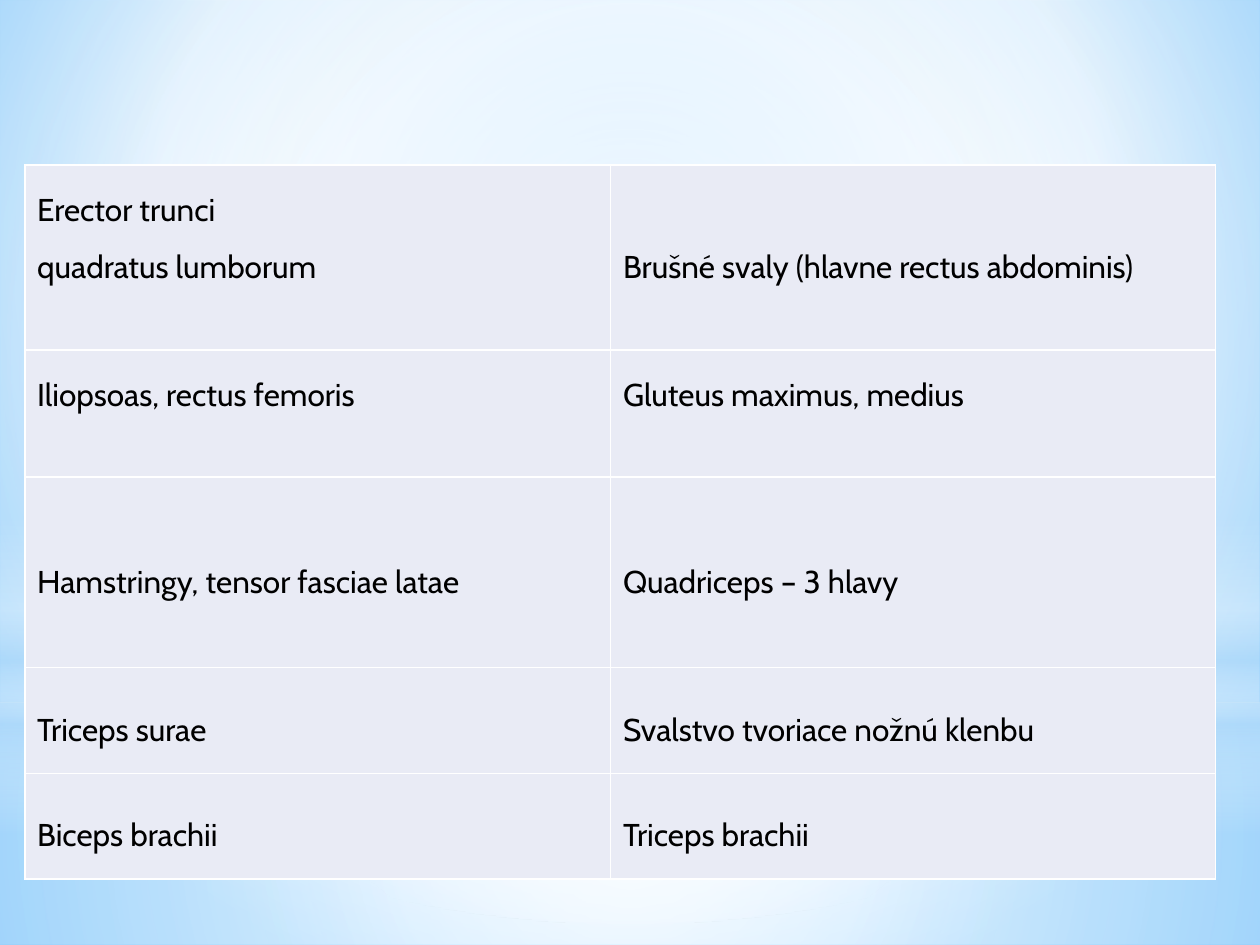
"""Build a slide with a two-column table of opposing muscle groups."""
from dataclasses import dataclass

from lxml.etree import SubElement
from pptx import Presentation
from pptx.dml.color import RGBColor
from pptx.enum.shapes import MSO_SHAPE
from pptx.enum.text import MSO_ANCHOR, PP_ALIGN
from pptx.oxml import parse_xml
from pptx.oxml.ns import nsdecls, qn
from pptx.slide import Slide
from pptx.util import Cm, Pt

MUSCLES = [
    (["Erector trunci", "quadratus lumborum"], ["Brušné svaly (hlavne rectus abdominis)"]),
    (["Iliopsoas, rectus femoris"], ["Gluteus maximus, medius"]),
    (["Hamstringy, tensor fasciae latae"], ["Quadriceps – 3 hlavy"]),
    (["Triceps surae"], ["Svalstvo tvoriace nožnú klenbu"]),
    (["Biceps brachii"], ["Triceps brachii"]),
]
RAISED_CELLS = {(0, 0), (1, 0), (1, 1)}
COLUMN_WIDTHS = [11.81, 12.19]
ROW_HEIGHTS = [3.68, 2.54, 3.84, 2.13, 2.13]
CENTRE = (50, 50, 50, 50)


def colour(value):
    """Turn a hex string into a colour."""
    return RGBColor.from_string(value)


@dataclass
class Painter:
    """Hold the style and the current slide."""

    slide: Slide
    font: str = "Cabin"
    size: int = 18
    ink: str = "000000"
    cell_fill: str = "E9EBF5"
    border: str = "FFFFFF"

    def gradient(self, fill, owner, stops, focus=None):
        """Give a fill a circular gradient, or a vertical one without a focus."""
        fill.gradient()
        gradient = owner.find(".//" + qn("a:gradFill"))
        for child in list(gradient):
            gradient.remove(child)
        stop_list = SubElement(gradient, qn("a:gsLst"))
        for position, value, opacity in stops:
            stop = SubElement(stop_list, qn("a:gs"), pos=str(position * 1000))
            tone = SubElement(stop, qn("a:srgbClr"), val=value)
            if opacity < 100:
                SubElement(tone, qn("a:alpha"), val=str(opacity * 1000))
        if focus is None:
            SubElement(gradient, qn("a:lin"), ang="5400000", scaled="0")
        else:
            route = SubElement(gradient, qn("a:path"), attrib={"path": "circle"})
            edges = {side: str(part * 1000) for side, part in zip("ltrb", focus)}
            SubElement(route, qn("a:fillToRect"), attrib=edges)

    def background(self, stops, focus):
        """Fill the slide background."""
        self.gradient(self.slide.background.fill, self.slide.element, stops, focus)

    def glow(self, kind, top, height, stops, focus=None):
        """Add a full-width gradient shape."""
        shape = self.slide.shapes.add_shape(kind, 0, Cm(top), Cm(25.4), Cm(height))
        shape.shadow.inherit = False
        shape.line.fill.background()
        self.gradient(shape.fill, shape.element, stops, focus)

    def table(self, left, top, widths, heights, rows):
        """Add a table with one list of lines for each cell."""
        frame = self.slide.shapes.add_table(
            len(heights), len(widths), Cm(left), Cm(top), Cm(sum(widths)), Cm(sum(heights)))
        table = frame.table
        table.first_row = table.horz_banding = False
        for column, width in zip(table.columns, widths):
            column.width = Cm(width)
        for row, height in zip(table.rows, heights):
            row.height = Cm(height)
        for row_index, row in enumerate(rows):
            for column_index, lines in enumerate(row):
                raised = (row_index, column_index) in RAISED_CELLS
                self.cell(table.cell(row_index, column_index), lines, raised)

    def cell(self, cell, lines, raised):
        """Fill one table cell, lifting its text by half a line if raised."""
        cell.fill.solid()
        cell.fill.fore_color.rgb = colour(self.cell_fill)
        cell.vertical_anchor = MSO_ANCHOR.MIDDLE
        cell.margin_left = cell.margin_right = Cm(0.25)
        cell.margin_top = Cm(0.13)
        cell.margin_bottom = Cm(1.27 if raised else 0.13)
        for index, side in enumerate("LRTB"):
            cell._tc.tcPr.insert(index, parse_xml(
                f'<a:ln{side} {nsdecls("a")} w="12700"><a:solidFill>'
                f'<a:srgbClr val="{self.border}"/></a:solidFill></a:ln{side}>'))
        for index, line in enumerate(lines):
            frame = cell.text_frame
            para = frame.add_paragraph() if index else frame.paragraphs[0]
            para.alignment = PP_ALIGN.JUSTIFY
            para.line_spacing = 1.5
            span = para.add_run()
            span.text = line
            span.font.name = self.font
            span.font.size = Pt(self.size)
            span.font.color.rgb = colour(self.ink)


def main():
    """Build and save the deck."""
    deck = Presentation()
    deck.slide_width, deck.slide_height = Cm(25.4), Cm(19.05)
    painter = Painter(deck.slides.add_slide(deck.slide_layouts[6]))
    painter.background(
        [(0, "9ED5FF", 100), (60, "FFFFFF", 100), (100, "5BB9FF", 100)], (20, 10, 20, 60))
    painter.glow(MSO_SHAPE.RECTANGLE, 14.17, 4.88,
                 [(0, "FFFFFF", 91), (37, "FFFFFF", 76), (100, "B4DCFA", 79)], CENTRE)
    painter.glow(MSO_SHAPE.RECTANGLE, 0, 14.17,
                 [(0, "FFFFFF", 89), (48, "FFFFFF", 62), (100, "B4DCFA", 79)], CENTRE)
    painter.glow(MSO_SHAPE.RECTANGLE, 10.46, 6.35,
                 [(0, "FFFFFF", 0), (29, "FFFFFF", 30), (45, "B4DCFA", 40),
                  (55, "FFFFFF", 26), (65, "B4DCFA", 60), (100, "FFFFFF", 0)])
    painter.glow(MSO_SHAPE.OVAL, 4.45, 14.17,
                 [(0, "FFFFFF", 100), (56, "FFFFFF", 0)], CENTRE)
    painter.table(0.5, 3.33, COLUMN_WIDTHS, ROW_HEIGHTS, MUSCLES)
    deck.save("out.pptx")


if __name__ == "__main__":
    main()
